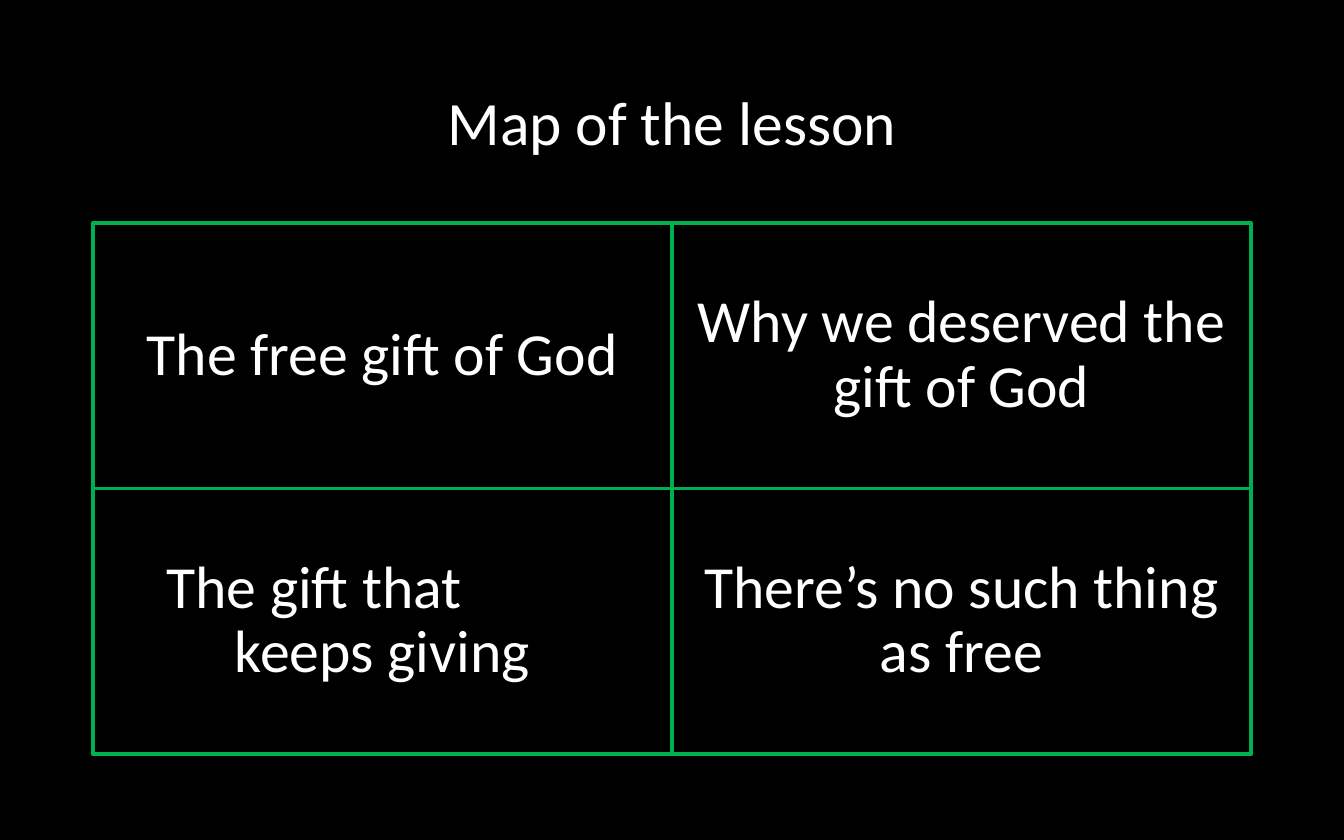
from pptx import Presentation
from pptx.dml.color import RGBColor
from pptx.enum.shapes import MSO_SHAPE as Shape
from pptx.enum.text import MSO_ANCHOR as Anchor, MSO_AUTO_SIZE as AutoSize, PP_ALIGN as Align
from pptx.util import Inches, Pt

COLORS = {"background": "000000", "text": "FFFFFF", "border": "00B050"}
LEFT, TOP, WIDTH, HEIGHT = 0.69, 1.66, 4.31, 1.975
TOPICS = [
    ["The free gift of God", "Why we deserved the gift of God"],
    ["The gift that\vkeeps giving", "There’s no such thing as free"],
]


def color(name):
    """Return the named colour."""
    return RGBColor.from_string(COLORS[name])


def write_text(box, text, size=32, align=Align.CENTER, margin=0, indent=0):
    """Fill a box with one formatted paragraph, optionally indented."""
    frame = box.text_frame
    frame.word_wrap = True
    frame.auto_size = AutoSize.NONE
    frame.vertical_anchor = Anchor.MIDDLE
    para = frame.paragraphs[0]
    para.text = text
    para.alignment = align
    para.line_spacing = 0.9
    if margin:
        properties = para._p.get_or_add_pPr()
        properties.set("marL", str(Inches(margin)))
        properties.set("indent", str(Inches(indent)))
    for span in para.runs:
        span.font.name = "Calibri"
        span.font.size = Pt(size)
        span.font.color.rgb = color("text")


def add_title(page, text):
    """Place and format the slide title."""
    title = page.shapes.title
    title.left, title.top = Inches(LEFT), Inches(0.33)
    title.width, title.height = Inches(2 * WIDTH), Inches(1.21)
    write_text(title, text, size=33)


def add_topic(page, row, column, text, **text_format):
    """Draw one outlined cell of the lesson map."""
    box = page.shapes.add_shape(
        Shape.RECTANGLE, Inches(LEFT + column * WIDTH), Inches(TOP + row * HEIGHT),
        Inches(WIDTH), Inches(HEIGHT))
    box.shadow.inherit = False
    box.fill.background()
    box.line.color.rgb = color("border")
    box.line.width = Pt(2)
    write_text(box, text, **text_format)


def main():
    """Build and save the lesson map."""
    deck = Presentation()
    deck.slide_width, deck.slide_height = Inches(10), Inches(6.25)
    page = deck.slides.add_slide(deck.slide_layouts[5])
    page.background.fill.solid()
    page.background.fill.fore_color.rgb = color("background")
    add_title(page, "Map of the lesson")
    staggered = {"align": Align.LEFT, "margin": 0.96, "indent": -0.51}
    for row, topics in enumerate(TOPICS):
        for column, text in enumerate(topics):
            add_topic(page, row, column, text, **(staggered if "\v" in text else {}))
    deck.save("out.pptx")


if __name__ == "__main__":
    main()
